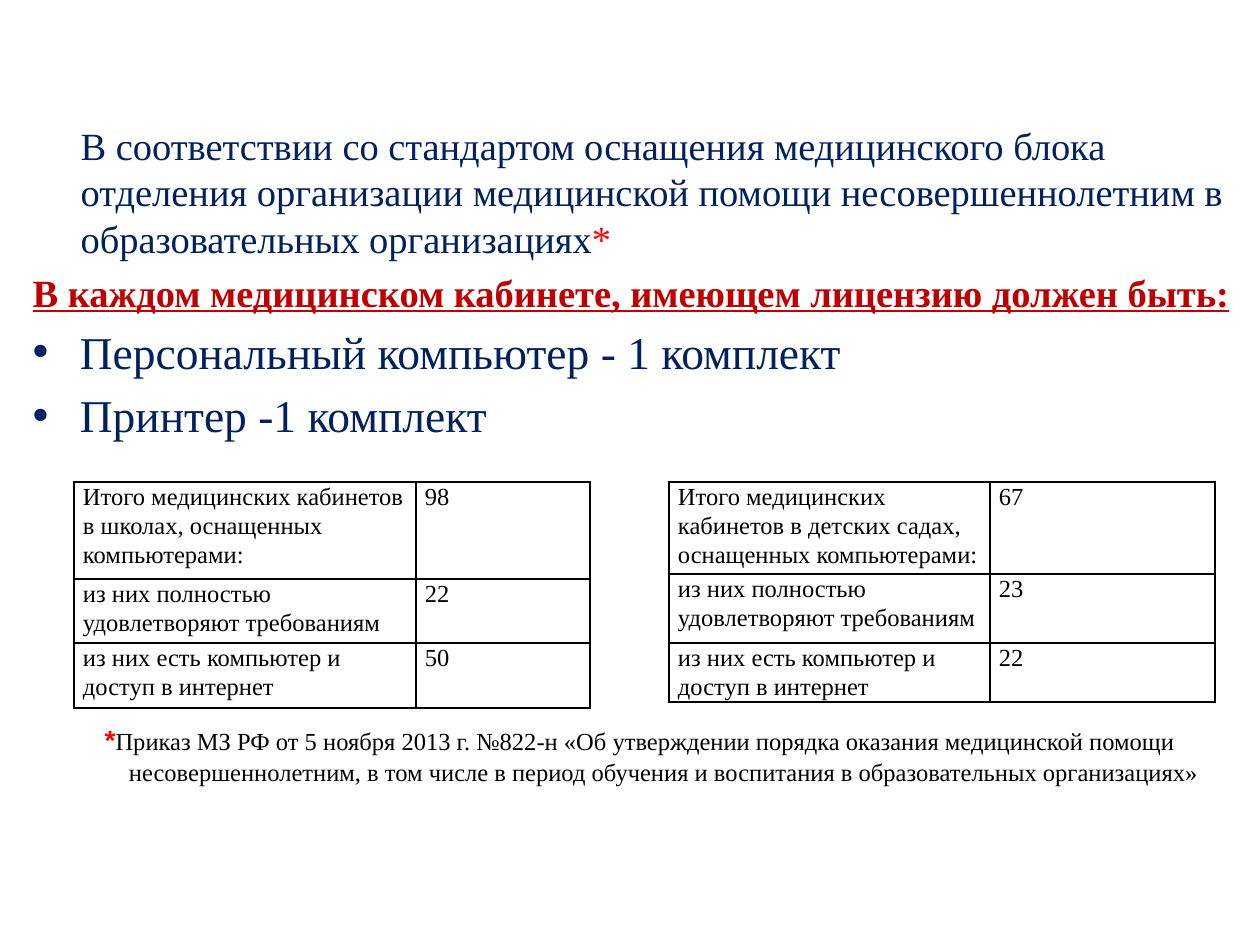
from lxml.etree import SubElement
from pptx import Presentation
from pptx.dml.color import RGBColor
from pptx.enum.text import MSO_AUTO_SIZE, PP_ALIGN
from pptx.oxml.ns import qn
from pptx.util import Emu, Pt

SERIF = "Times New Roman"
NAVY, RED, CRIMSON, BLACK = "002060", "FF0000", "C00000", "000000"
HANGING = 48

PARAGRAPHS = [
    {"indent": 0, "runs": [
        ("В соответствии со стандартом оснащения медицинского блока отделения организации "
         "медицинской помощи несовершеннолетним в образовательных организациях", 22, NAVY),
        ("*", 22, RED)]},
    {"indent": -HANGING, "runs": [
        ("В каждом медицинском кабинете, имеющем лицензию должен быть:",
         22, CRIMSON, SERIF, True, True)]},
    {"bullet": True, "runs": [("Персональный компьютер - 1 комплект", 26, NAVY)]},
    {"bullet": True, "runs": [("Принтер -1 комплект", 26, NAVY)]},
    {"indent": -HANGING, "align": PP_ALIGN.CENTER, "before": 281, "runs": [
        ("*", 16, RED, "Arial", True),
        ("Приказ МЗ РФ от 5 ноября 2013 г. №822-н «Об утверждении порядка оказания "
         "медицинской помощи несовершеннолетним, в том числе в период обучения и "
         "воспитания в образовательных организациях»", 14, BLACK)]},
]

FULL = "из них полностью удовлетворяют требованиям"
ONLINE = "из них есть компьютер и доступ в интернет"
TABLES = [
    {"left": 74, "columns": (342, 174), "heights": (97, 64, 65), "rows": [
        ("Итого медицинских кабинетов в школах, оснащенных компьютерами:", "98"),
        (FULL, "22"), (ONLINE, "50")]},
    {"left": 669, "columns": (321, 225), "heights": (92, 69, 59), "rows": [
        ("Итого медицинских кабинетов в детских садах, оснащенных компьютерами:", "67"),
        (FULL, "23"), (ONLINE, "22")]},
]
TABLE_TOP = 482


def px(value):
    return Emu(round(value * 914400 / 126))


def color(value):
    return RGBColor.from_string(value)


def add_run(paragraph, text, size, fill, face=SERIF, bold=False, underline=False):
    run = paragraph.add_run()
    run.text = text
    font = run.font
    font.name, font.size, font.bold, font.underline = face, Pt(size), bold, underline
    font.color.rgb = color(fill)


def fill_body(body):
    body.left, body.top, body.width, body.height = map(px, (20, 116, 1240, 814))
    frame = body.text_frame
    frame.auto_size = MSO_AUTO_SIZE.NONE
    for index, item in enumerate(PARAGRAPHS):
        paragraph = frame.add_paragraph() if index else frame.paragraphs[0]
        properties = paragraph._p.get_or_add_pPr()
        if not item.get("bullet"):
            properties.set("marL", str(px(HANGING)))
            properties.set("indent", str(px(item["indent"])))
            SubElement(properties, qn("a:buNone"))
        if "align" in item:
            paragraph.alignment = item["align"]
        if "before" in item:
            paragraph.space_before = px(item["before"])
        for run in item["runs"]:
            add_run(paragraph, *run)


def format_cell(cell, text):
    cell.margin_left = cell.margin_right = px(9)
    cell.margin_top = cell.margin_bottom = 0
    paragraph = cell.text_frame.paragraphs[0]
    paragraph.line_spacing = 1.07
    add_run(paragraph, text, 14, BLACK)
    properties = cell._tc.get_or_add_tcPr()
    for side in ("a:lnL", "a:lnR", "a:lnT", "a:lnB"):
        line = SubElement(properties, qn(side), w=str(Pt(1)))
        SubElement(SubElement(line, qn("a:solidFill")), qn("a:srgbClr"), val=BLACK)
    cell.fill.background()


def add_data_table(slide, left, columns, heights, rows):
    frame = slide.shapes.add_table(len(rows), len(columns), px(left), px(TABLE_TOP),
                                   px(sum(columns)), px(sum(heights)))
    table = frame.table
    table.first_row = table.horz_banding = False
    for column, width in zip(table.columns, columns):
        column.width = px(width)
    for row, height, texts in zip(table.rows, heights, rows):
        row.height = px(height)
        for cell, text in zip(row.cells, texts):
            format_cell(cell, text)


def main():
    """Build the slide on computer equipment in medical rooms."""
    presentation = Presentation()
    presentation.slide_width, presentation.slide_height = px(1260), px(945)
    slide = presentation.slides.add_slide(presentation.slide_layouts[1])
    title = slide.shapes.title
    title._element.getparent().remove(title._element)
    fill_body(slide.placeholders[1])
    for table in TABLES:
        add_data_table(slide, **table)
    presentation.save("out.pptx")


if __name__ == "__main__":
    main()
